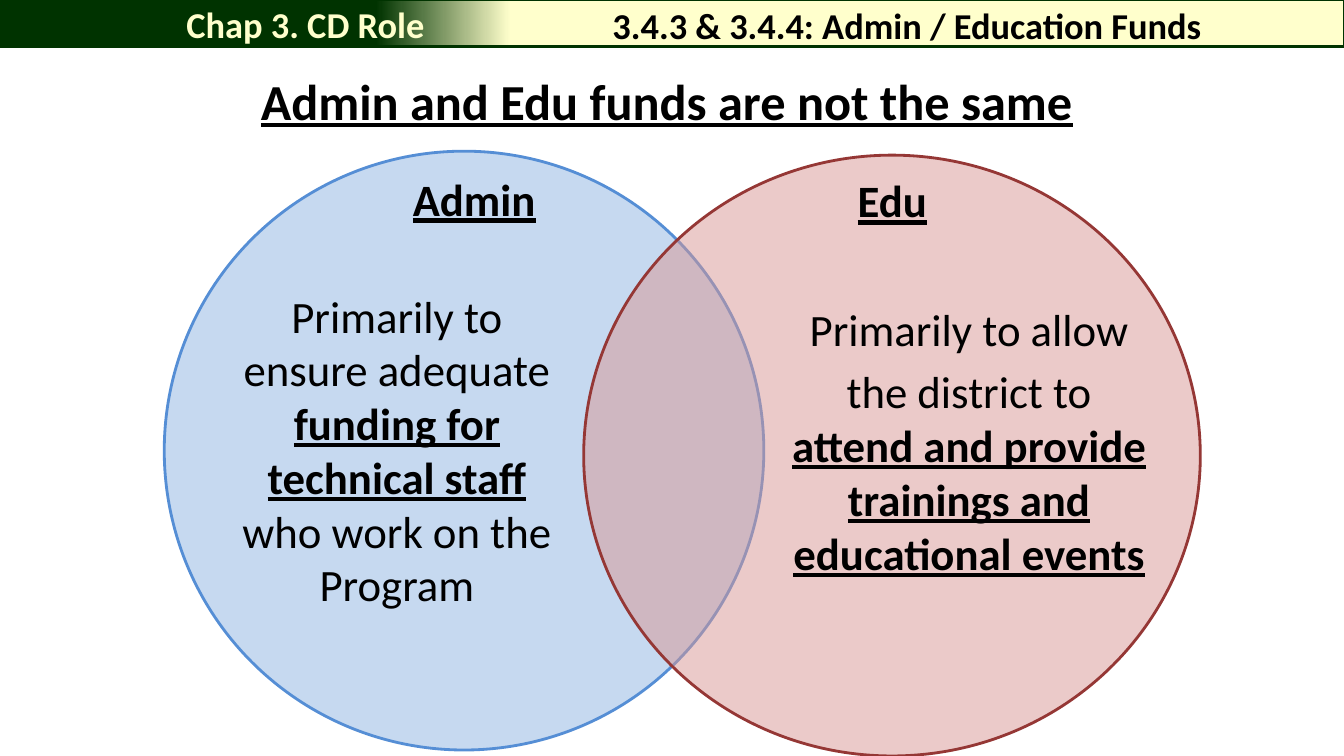
from lxml.etree import SubElement as Sub
from pptx import Presentation
from pptx.dml.color import RGBColor as RGB
from pptx.enum.shapes import MSO_SHAPE as Kind
from pptx.enum.text import MSO_ANCHOR as Anchor, PP_ALIGN as Align
from pptx.oxml.ns import qn
from pptx.util import Cm, Pt

GREEN = RGB(0x00, 0x33, 0x00)
CREAM = RGB(0xFF, 0xFF, 0xCC)
BLACK = RGB(0x00, 0x00, 0x00)
SKY = RGB(0x8E, 0xB4, 0xE3)
BLUE = RGB(0x55, 0x8E, 0xD5)
ROSE = RGB(0xD9, 0x96, 0x94)
RED = RGB(0x95, 0x37, 0x35)


class Deck:
    """Hold the text style and the current slide."""

    font = "Calibri"
    edge = Pt(2)

    def __init__(self, slide):
        self.slide = slide

    def shape(self, kind, area, line):
        item = self.slide.shapes.add_shape(kind, *map(Cm, area))
        item.shadow.inherit = False
        item.line.color.rgb = line
        item.line.width = self.edge
        return item

    def bar(self, area, line, stops):
        fill = self.shape(Kind.RECTANGLE, area, line).fill
        fill.gradient()
        fill.gradient_angle = 0
        for stop, (place, color) in zip(fill.gradient_stops, stops):
            stop.position = place
            stop.color.rgb = color

    def circle(self, area, color, line):
        item = self.shape(Kind.OVAL, area, line)
        item.fill.solid()
        item.fill.fore_color.rgb = color
        tint = item.element.spPr.find(qn("a:solidFill"))[0]
        Sub(tint, qn("a:alpha")).set("val", "50000")

    def text(self, area, paras, size, color=BLACK, align=Align.CENTER,
             anchor=Anchor.TOP, indent=0, line=True):
        """Write paragraphs of (words, strong) runs; strong ones may be underlined."""
        frame = self.slide.shapes.add_textbox(*map(Cm, area)).text_frame
        frame.word_wrap = True
        frame.vertical_anchor = anchor
        for i, parts in enumerate(paras):
            para = frame.add_paragraph() if i else frame.paragraphs[0]
            para.alignment = align
            if i:
                para.space_before = Pt(size * 0.2)
            if indent:
                para._p.get_or_add_pPr().set("marL", str(Cm(indent)))
            for words, strong in parts:
                run = para.add_run()
                run.text = words
                font = run.font
                font.name = self.font
                font.size = Pt(size)
                font.color.rgb = color
                font.bold = strong
                font.underline = strong and line


def main():
    show = Presentation()
    show.slide_width, show.slide_height = Cm(33.87), Cm(19.05)
    deck = Deck(show.slides.add_slide(show.slide_layouts[6]))

    deck.bar((0, 0, 33.87, 1.17), GREEN, [(0.28, GREEN), (0.38, CREAM)])
    deck.text((11.86, 0, 22.02, 1.27),
              [[("3.4.3 & 3.4.4: Admin / Education Funds", True)]],
              26, anchor=Anchor.MIDDLE, line=False)
    deck.text((5.38, 1.63, 22.86, 2.18),
              [[("Admin and Edu funds are not the same", True)]], 36)
    deck.text((4.45, -0.03, 9.09, 1.27), [[("Chap 3. CD Role", True)]],
              26, CREAM, Align.LEFT, Anchor.MIDDLE, line=False)

    deck.circle((4.14, 3.81, 15.11, 15.09), SKY, BLUE)
    deck.circle((14.71, 3.91, 15.54, 15.14), ROSE, RED)
    for name, left, top in (("Admin", 9.09, 4.19), ("Edu", 19.63, 4.24)):
        deck.text((left, top, 5.72, 1.65), [[(name, True)]], 32)

    deck.text((5.79, 7.14, 8.43, 8.46), [[
        ("Primarily to ensure adequate ", False),
        ("funding for technical staff ", True),
        ("who work on the Program", False),
    ]], 32)
    deck.text((18.9, 7.47, 10.41, 9.42), [
        [("Primarily to allow", False)],
        [("the district to ", False),
         ("attend and provide trainings and educational events", True)],
    ], 32, indent=0.64)

    show.save("out.pptx")


if __name__ == "__main__":
    main()
